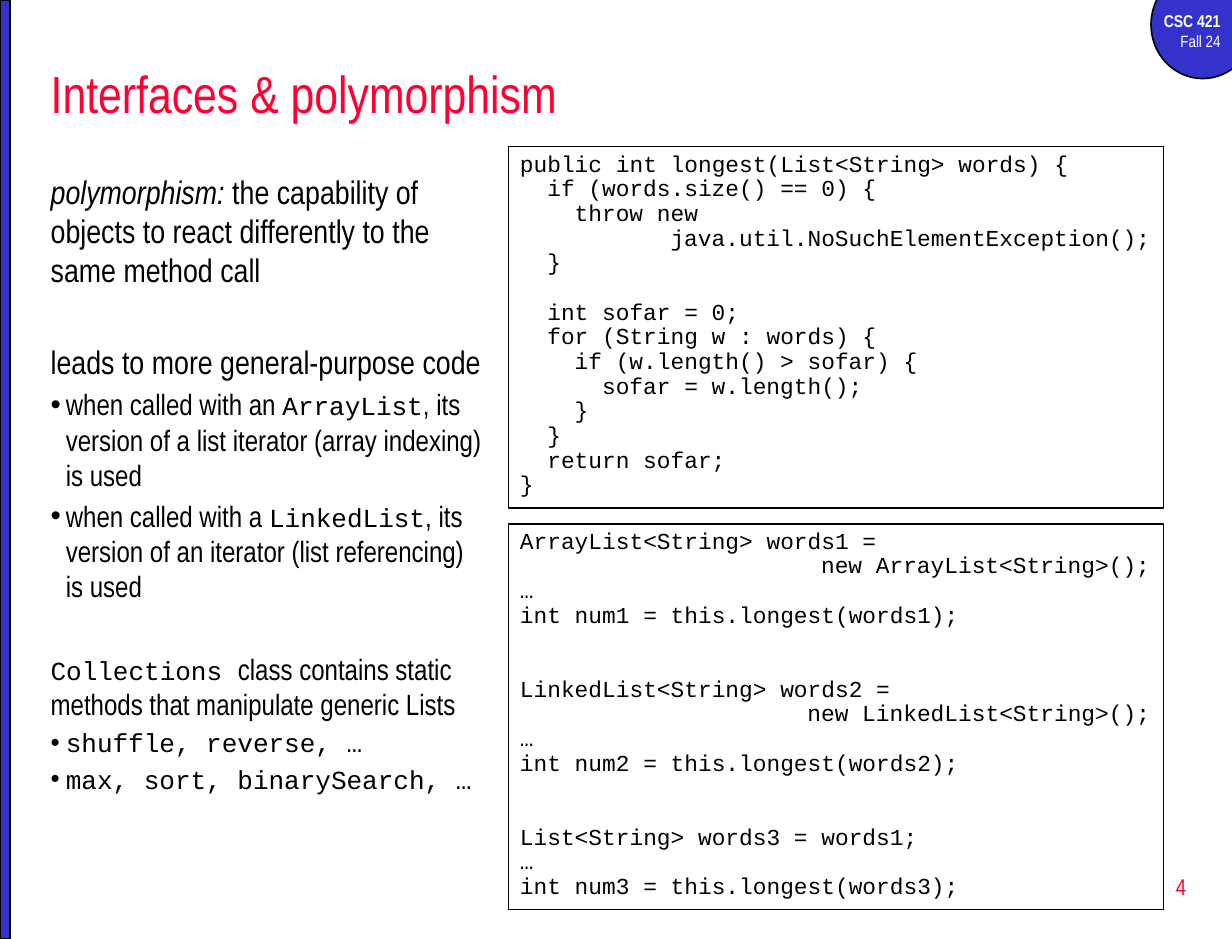
from pptx import Presentation
from pptx.dml.color import RGBColor
from pptx.enum.shapes import MSO_SHAPE
from pptx.enum.text import MSO_ANCHOR, PP_ALIGN
from pptx.oxml import parse_xml
from pptx.oxml.ns import nsdecls
from pptx.util import Pt

OVAL, RECT = MSO_SHAPE.OVAL, MSO_SHAPE.RECTANGLE
TOP, MIDDLE = MSO_ANCHOR.TOP, MSO_ANCHOR.MIDDLE
LEFT, RIGHT = PP_ALIGN.LEFT, PP_ALIGN.RIGHT
BLUE, RED, BLACK, WHITE = "3333CC", "FF0033", "000000", "FFFFFF"
SANS, MONO = "Arial Narrow", "Courier New"
CHAR, LINE = 8.4, 15.12  # width and line pitch of 14 pt code

prs = Presentation()
prs.slide_width, prs.slide_height = Pt(756), Pt(576)
slide = prs.slides.add_slide(prs.slide_layouts[6])


def hue(code):
    return RGBColor.from_string(code)


def write(para, text, **look):
    """Add a run whose font takes the given format values."""
    run = para.add_run()
    run.text = text
    look = {"name": SANS, "color": BLACK} | look
    run.font.color.rgb = hue(look.pop("color"))
    for key, value in look.items():
        setattr(run.font, key, value)


# Badge, side bar and code frames
frames = []
for kind, box, fill in [
    (OVAL, (706.3, -18, 63.4, 66.2), BLUE),
    (RECT, (0, 0, 6, 576), BLUE),
    (RECT, (312, 90, 402, 221.5), None),
    (RECT, (312, 321.3, 402, 236.7), None),
]:
    shape = slide.shapes.add_shape(kind, *map(Pt, box))
    shape.shadow.inherit = False
    if fill:
        shape.fill.solid()
        shape.fill.fore_color.rgb = hue(fill)
    else:
        shape.fill.background()
        frames.append(shape.text_frame)
    shape.line.color.rgb = hue(BLACK)
    shape.line.width = Pt(1)

# Course, title and page number
for box, anchor, align, lines in [
    ((696.2, 2.9, 59.8, 33.1), TOP, RIGHT, [
        ("CSC 421", {"size": Pt(10.5), "color": WHITE, "bold": True}),
        ("Fall 24", {"size": Pt(10), "color": WHITE})]),
    ((24, 30, 714, 54), MIDDLE, LEFT, [
        ("Interfaces & polymorphism", {"size": Pt(32), "color": RED})]),
    ((577.5, 525, 157.5, 38), MIDDLE, RIGHT, [
        ("4", {"size": Pt(14), "color": RED})]),
]:
    frame = slide.shapes.add_textbox(*map(Pt, box)).text_frame
    frame.word_wrap, frame.vertical_anchor = True, anchor
    for i, (text, look) in enumerate(lines):
        para = frame.add_paragraph() if i else frame.paragraphs[0]
        para.alignment = align
        write(para, text, **look)

# Code: (gap in lines above, indent in characters, text)
longest = [
    (0, 0, "public int longest(List<String> words) {"),
    (0, 2, "if (words.size() == 0) {"),
    (0, 4, "throw new"),
    (0, 11, "java.util.NoSuchElementException();"),
    (0, 2, "}"),
    (1, 2, "int sofar = 0;"),
    (0, 2, "for (String w : words) {"),
    (0, 4, "if (w.length() > sofar) {"),
    (0, 6, "sofar = w.length();"),
    (0, 4, "}"),
    (0, 2, "}"),
    (0, 2, "return sofar;"),
    (0, 0, "}"),
]
calls = [
    (0, 0, "ArrayList<String> words1 ="),
    (0, 22, "new ArrayList<String>();"),
    (0, 0, "…"),
    (0, 0, "int num1 = this.longest(words1);"),
    (2, 0, "LinkedList<String> words2 ="),
    (0, 21, "new LinkedList<String>();"),
    (0, 0, "…"),
    (0, 0, "int num2 = this.longest(words2);"),
    (2, 0, "List<String> words3 = words1;"),
    (0, 0, "…"),
    (0, 0, "int num3 = this.longest(words3);"),
]
for frame, code in zip(frames, (longest, calls)):
    frame.word_wrap, frame.vertical_anchor = True, TOP
    for i, (gap, indent, text) in enumerate(code):
        para = frame.add_paragraph() if i else frame.paragraphs[0]
        para.alignment, para.line_spacing = LEFT, 0.9
        para.space_before = Pt(gap * LINE)
        para._p.get_or_add_pPr().set("marL", str(Pt(indent * CHAR)))
        write(para, text, name=MONO, size=Pt(14))

# Notes on the left: (space above, bulleted, runs)
big, mid = {"size": Pt(20)}, {"size": Pt(18)}
mono = {"size": Pt(16), "name": MONO}
notes = [
    (4, False, [("polymorphism:", big | {"italic": True}),
                (" the capability of objects to react differently "
                 "to the same method call", big)]),
    (32, False, [("leads to more general-purpose code", big)]),
    (3.6, True, [("when called with an ", mid), ("ArrayList", mono),
                 (", its version of a list iterator (array indexing) "
                  "is used", mid)]),
    (3.6, True, [("when called with a ", mid), ("LinkedList", mono),
                 (", its version of an iterator (list referencing) "
                  "is used", mid)]),
    (29, False, [("Collections ", mono),
                 ("class contains static methods that manipulate "
                  "generic Lists", mid)]),
    (3.2, True, [("shuffle, reverse, …", mono)]),
    (3.2, True, [("max, sort, binarySearch, …", mono)]),
]
frame = slide.shapes.add_textbox(Pt(24), Pt(102), Pt(282), Pt(398)).text_frame
frame.word_wrap = True
for i, (gap, bullet, runs) in enumerate(notes):
    para = frame.add_paragraph() if i else frame.paragraphs[0]
    para.space_before = Pt(gap)
    if bullet:
        props = para._p.get_or_add_pPr()
        props.set("marL", str(Pt(9.36)))
        props.set("indent", str(-Pt(9.36)))
        props.append(parse_xml(f'<a:buFont {nsdecls("a")} typeface="Arial"/>'))
        props.append(parse_xml(f'<a:buChar {nsdecls("a")} char="•"/>'))
    for text, look in runs:
        write(para, text, **look)

prs.save("out.pptx")
